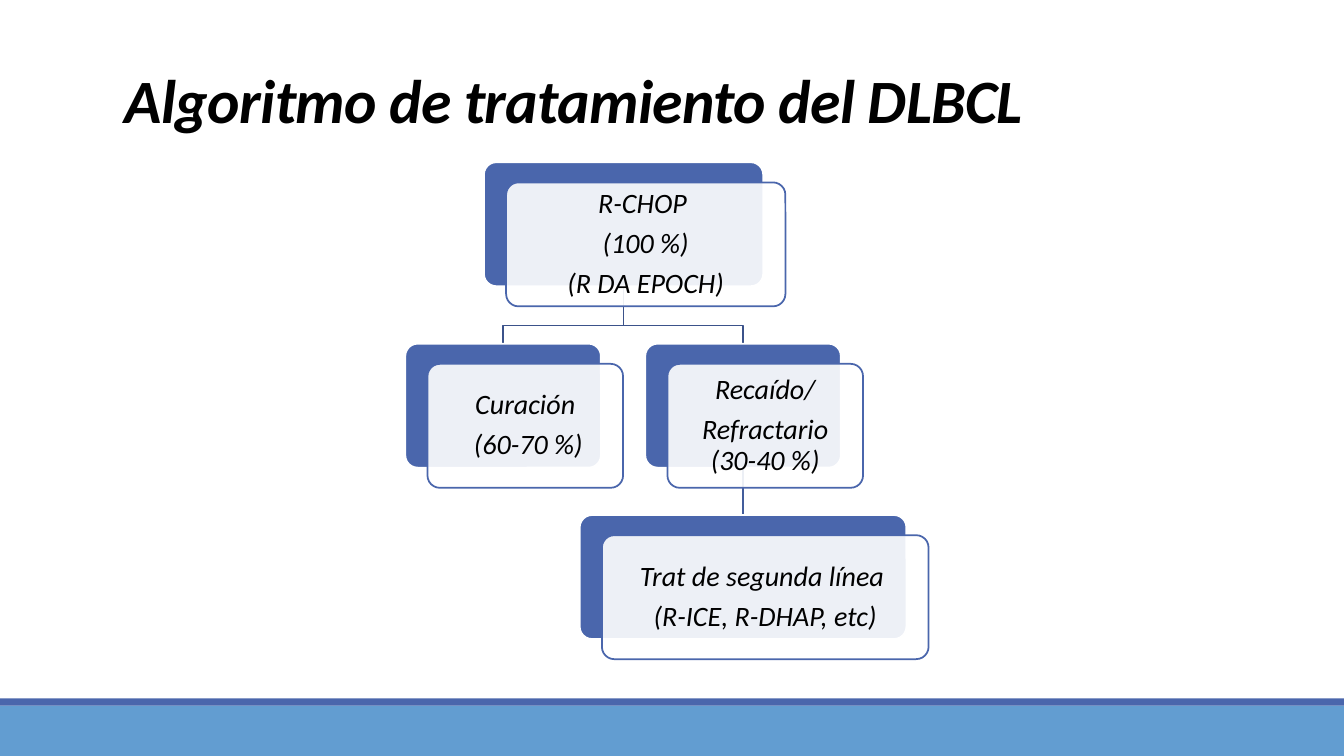
from lxml.etree import SubElement
from pptx import Presentation
from pptx.dml.color import RGBColor
from pptx.enum.shapes import MSO_CONNECTOR, MSO_SHAPE
from pptx.enum.text import MSO_ANCHOR, PP_ALIGN
from pptx.oxml.ns import qn
from pptx.util import Inches, Pt

COLORS = {
    "text": "000000",
    "white": "FFFFFF",
    "accent": "4A66AC",
    "footer": "629DD1",
    "branch": "3B528A",
    "stem": "435D9C",
}
FONT = "Calibri"
SLIDE_WIDTH, SLIDE_HEIGHT = 13.33, 7.5
BOX_HEIGHT = 1.23
OFFSET_X, OFFSET_Y = 0.22, 0.2
LINE_WIDTH = Pt(1.25)

# Left, top, width and lines of each step
STEPS = {
    "first_line": (4.8, 1.61, 2.77, ["R-CHOP ", "(100 %)", "(R DA EPOCH)"]),
    "cure": (4.02, 3.41, 1.94, ["Curación", " (60-70 %)"]),
    "relapse": (6.4, 3.41, 1.94, ["Recaído/", "Refractario (30-40 %)"]),
    "second_line": (5.75, 5.11, 3.24,
                    ["Trat de segunda línea ", "(R-ICE, R-DHAP, etc)"]),
}


def color(name):
    return RGBColor.from_string(COLORS[name])


def format_runs(paragraph, size, bold=False):
    for run in paragraph.runs:
        run.font.name = FONT
        run.font.size = Pt(size)
        run.font.italic = True
        run.font.bold = bold
        run.font.color.rgb = color("text")


def add_filled(slide, kind, left, top, width, height, fill, line=None):
    shape = slide.shapes.add_shape(
        kind, Inches(left), Inches(top), Inches(width), Inches(height))
    shape.shadow.inherit = False
    shape.fill.solid()
    shape.fill.fore_color.rgb = color(fill)
    if line:
        shape.line.color.rgb = color(line)
        shape.line.width = LINE_WIDTH
    else:
        shape.line.fill.background()
    return shape


def add_footer(slide, top, height, stripe):
    add_filled(slide, MSO_SHAPE.RECTANGLE, 0, top + stripe, SLIDE_WIDTH,
               height - stripe, "footer")
    add_filled(slide, MSO_SHAPE.RECTANGLE, 0, top, SLIDE_WIDTH, stripe, "accent")


def add_title(slide, left, top, width, height):
    box = slide.shapes.add_textbox(
        Inches(left), Inches(top), Inches(width), Inches(height))
    frame = box.text_frame
    frame.word_wrap = True
    frame.vertical_anchor = MSO_ANCHOR.BOTTOM
    frame.text = "Algoritmo de tratamiento del DLBCL"
    paragraph = frame.paragraphs[0]
    paragraph.line_spacing = 0.85
    format_runs(paragraph, 44, bold=True)
    paragraph.runs[0].font._element.set("spc", "-50")


def add_step(slide, left, top, width, lines):
    """Draw a solid card with a translucent text card over it; return the solid one."""
    back = add_filled(slide, MSO_SHAPE.ROUNDED_RECTANGLE, left, top, width,
                      BOX_HEIGHT, "accent", "white")
    front = add_filled(slide, MSO_SHAPE.ROUNDED_RECTANGLE, left + OFFSET_X,
                       top + OFFSET_Y, width, BOX_HEIGHT, "white", "accent")
    for card in (back, front):
        card.adjustments[0] = 0.1
    fill_color = front.fill._xPr.find(qn("a:solidFill"))[0]
    SubElement(fill_color, qn("a:alpha"), val="90000")

    frame = front.text_frame
    frame.word_wrap = True
    frame.vertical_anchor = MSO_ANCHOR.MIDDLE
    frame.margin_left = frame.margin_right = Inches(0.08)
    frame.margin_top = frame.margin_bottom = Inches(0.08)
    frame.text = "\n".join(lines)
    for paragraph in frame.paragraphs:
        paragraph.alignment = PP_ALIGN.CENTER
        paragraph.line_spacing = 0.9
        paragraph.space_after = Pt(7)
        format_runs(paragraph, 20)
    return back


def add_branch(slide, parent, child):
    """Draw a stepped line from the bottom of one step to the top of another."""
    start_x, end_x = (step[0] + step[2] / 2 for step in (parent, child))
    start_y, end_y = parent[1] + BOX_HEIGHT, child[1]
    bend_y = end_y - 0.18
    builder = slide.shapes.build_freeform(
        Inches(start_x), Inches(start_y), scale=1.0)
    corners = [(start_x, bend_y), (end_x, bend_y), (end_x, end_y)]
    builder.add_line_segments(
        [(Inches(x), Inches(y)) for x, y in corners], close=False)
    branch = builder.convert_to_shape()
    branch.shadow.inherit = False
    branch.fill.background()
    branch.line.color.rgb = color("branch")
    branch.line.width = LINE_WIDTH


def add_stem(slide):
    stem = slide.shapes.add_connector(MSO_CONNECTOR.STRAIGHT, 0, 0, 0, 0)
    stem.line.color.rgb = color("stem")
    stem.line.width = LINE_WIDTH
    SubElement(stem._element.spPr, qn("a:effectLst"))
    return stem


def add_flowchart(slide):
    stem = add_stem(slide)
    for child in ("relapse", "cure"):
        add_branch(slide, STEPS["first_line"], STEPS[child])
    cards = {name: add_step(slide, *step) for name, step in STEPS.items()}
    stem.begin_connect(cards["relapse"], 2)
    stem.end_connect(cards["second_line"], 0)


def main():
    presentation = Presentation()
    presentation.slide_width = Inches(SLIDE_WIDTH)
    presentation.slide_height = Inches(SLIDE_HEIGHT)
    slide = presentation.slides.add_slide(presentation.slide_layouts[6])
    add_footer(slide, 6.93, 0.57, 0.07)
    add_title(slide, 1.14, 0.32, 10.03, 1.08)
    add_flowchart(slide)
    presentation.save("out.pptx")


if __name__ == "__main__":
    main()
